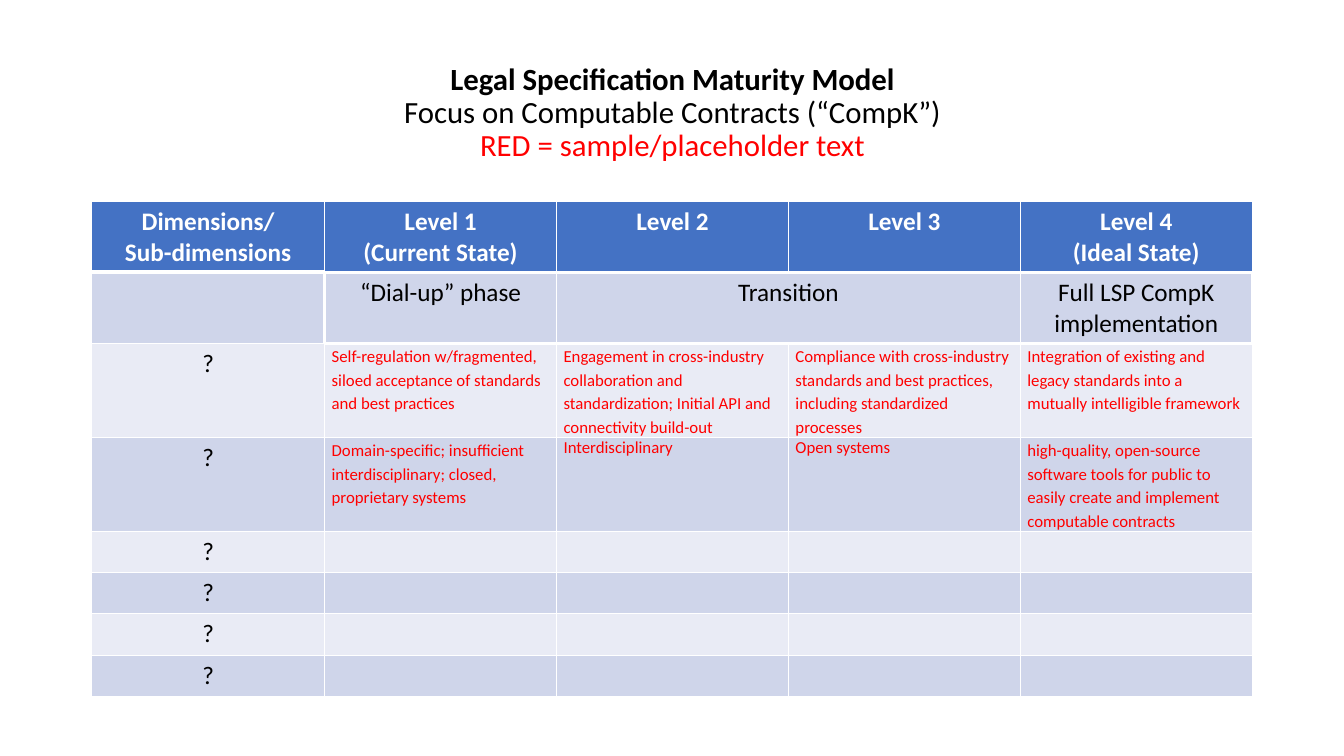
"""Build the Legal Specification Maturity Model slide."""
import pptx
import pptx.dml.color
import pptx.enum.text
import pptx.oxml
import pptx.oxml.ns
import pptx.util

Inches = pptx.util.Inches
Pt = pptx.util.Pt
CENTER = pptx.enum.text.PP_ALIGN.CENTER
LEFT = pptx.enum.text.PP_ALIGN.LEFT


def color(hex_string):
    return pptx.dml.color.RGBColor.from_string(hex_string)


def add_border(cell, side, points):
    cell._tc.get_or_add_tcPr().append(pptx.oxml.parse_xml(
        f'<a:ln{side} {pptx.oxml.ns.nsdecls("a")} w="{Pt(points)}"><a:solidFill>'
        f'<a:srgbClr val="FFFFFF"/></a:solidFill></a:ln{side}>'))


deck = pptx.Presentation()
deck.slide_width = Inches(13.33)
deck.slide_height = Inches(7.5)
slide = deck.slides.add_slide(deck.slide_layouts[6])

title_box = slide.shapes.add_textbox(Inches(0.92), Inches(0.4), Inches(11.5), Inches(1.45))
title_frame = title_box.text_frame
title_frame.word_wrap = True
title_frame.vertical_anchor = pptx.enum.text.MSO_ANCHOR.MIDDLE
title = title_frame.paragraphs[0]
title.alignment = CENTER
title.line_spacing = 0.9
title.font.name = "Calibri"
title.font.size = Pt(22)
title_lines = [
    ("Legal Specification Maturity Model", True, "000000"),
    ("Focus on Computable Contracts (“CompK”)", False, "000000"),
    ("RED = sample/placeholder text", False, "FF0000"),
]
for index, (text, bold, hex_string) in enumerate(title_lines):
    if index:
        title.add_line_break()
    span = title.add_run()
    span.text = text
    span.font.bold = bold
    span.font.color.rgb = color(hex_string)

rows = [
    ["Dimensions/\vSub-dimensions", "Level 1\n(Current State)", "Level 2", "Level 3",
     "Level 4\n(Ideal State)"],
    ["", "“Dial-up” phase", "Transition", "", "Full LSP CompK implementation"],
    ["?",
     "Self-regulation w/fragmented, siloed acceptance of standards and best practices",
     "Engagement in cross-industry collaboration and standardization; "
     "Initial API and connectivity build-out",
     "Compliance with cross-industry standards and best practices, "
     "including standardized processes",
     "Integration of existing and legacy standards into a mutually intelligible framework"],
    ["?",
     "Domain-specific; insufficient interdisciplinary; closed, proprietary systems",
     "Interdisciplinary",
     "Open systems",
     "high-quality, open-source software tools for public to easily create "
     "and implement computable contracts"],
] + [["?", "", "", "", ""]] * 4
row_heights = [0.7, 0.71, 0.93, 0.93] + [0.41] * 4
column_widths = [2.31] + [2.3] * 4
single_spaced = ("Interdisciplinary", "Open systems")

table = slide.shapes.add_table(
    len(rows), len(column_widths), Inches(0.91), Inches(2),
    Inches(sum(column_widths)), Inches(sum(row_heights))).table
for column, width in zip(table.columns, column_widths):
    column.width = Inches(width)
for row, height in zip(table.rows, row_heights):
    row.height = Inches(height)
table.cell(1, 2).merge(table.cell(1, 3))

for row_index, texts in enumerate(rows):
    for column_index, text in enumerate(texts):
        cell = table.cell(row_index, column_index)
        is_header = row_index == 0
        is_sample = row_index in (2, 3) and column_index > 0

        add_border(cell, "L", 2.25 if (row_index, column_index) == (1, 1) else 1)
        add_border(cell, "R", 2.25 if row_index == 1 and column_index in (0, 4) else 1)
        add_border(cell, "T", 2.25 if row_index in (1, 2) and column_index else 1)
        if is_header and column_index == 0:
            add_border(cell, "B", 3)
        else:
            add_border(cell, "B", 2.25 if row_index < 2 and column_index else 1)

        cell.fill.solid()
        band = "CFD5EA" if row_index % 2 else "E9EBF5"
        cell.fill.fore_color.rgb = color("4472C4" if is_header else band)
        if is_sample:
            cell.margin_left = cell.margin_right = Inches(0.07)
            cell.margin_top = cell.margin_bottom = 0
        if not text:
            continue

        cell.text_frame.text = text
        for para in cell.text_frame.paragraphs:
            para.alignment = LEFT if is_sample else CENTER
            if is_sample and text not in single_spaced:
                para.line_spacing = 1.15
            para.font.name = "Calibri"
            para.font.size = Pt(12 if is_sample else 18)
            para.font.bold = is_header
            para.font.color.rgb = color(
                "FFFFFF" if is_header else "FF0000" if is_sample else "000000")

deck.save("out.pptx")
